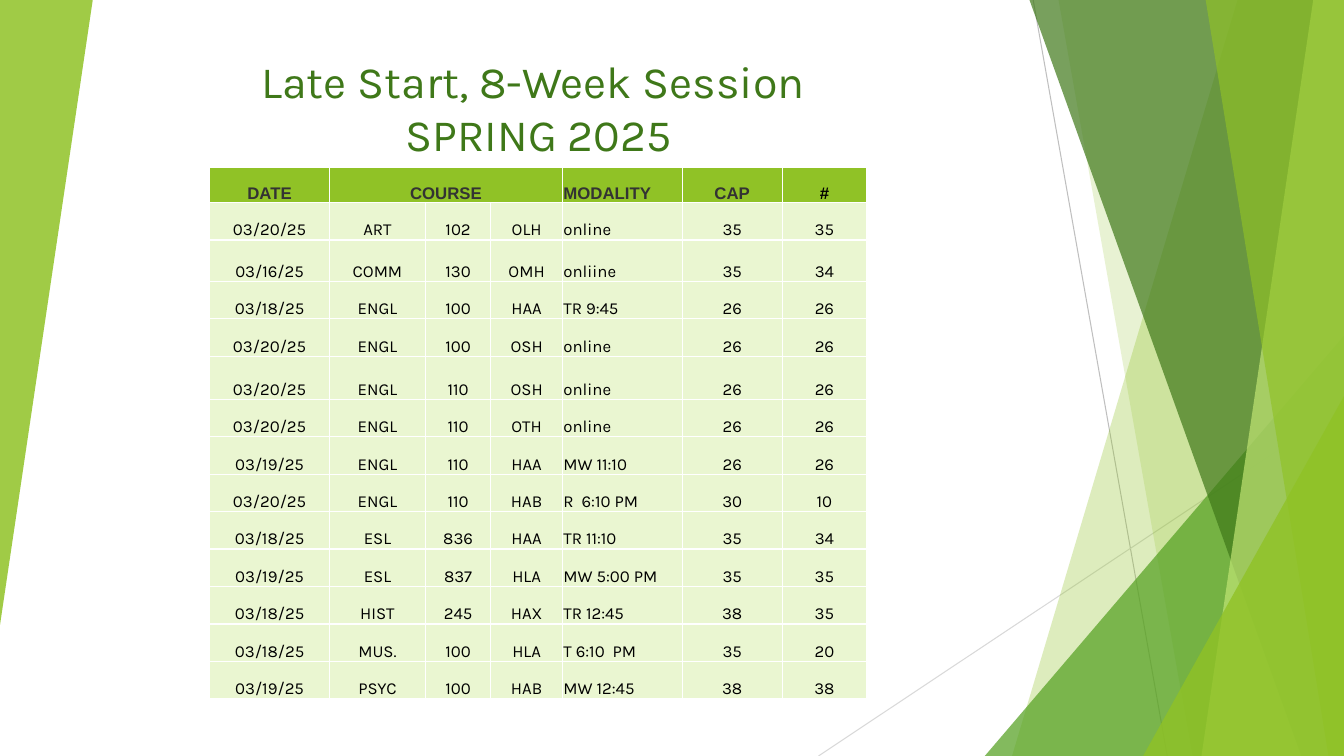
import lxml.etree
import pptx
import pptx.dml.color
import pptx.enum.shapes
import pptx.enum.text
import pptx.oxml.ns
import pptx.util
from dataclasses import dataclass

Pt = pptx.util.Pt

# Content
TITLE_LINES = ("Late Start, 8-Week Session ", "SPRING 2025")
HEADER = ("DATE", "COURSE", "", "", "MODALITY", "CAP", "#")
COURSES = [
    ("03/20/25", "ART", "102", "OLH", "online", "35", "35"),
    ("03/16/25", "COMM", "130", "OMH", "onliine", "35", "34"),
    ("03/18/25", "ENGL", "100", "HAA", "TR 9:45", "26", "26"),
    ("03/20/25", "ENGL", "100", "OSH", "online", "26", "26"),
    ("03/20/25", "ENGL", "110", "OSH", "online", "26", "26"),
    ("03/20/25", "ENGL", "110", "OTH", "online", "26", "26"),
    ("03/19/25", "ENGL", "110", "HAA", "MW 11:10", "26", "26"),
    ("03/20/25", "ENGL", "110", "HAB", "R  6:10 PM", "30", "10"),
    ("03/18/25", "ESL", "836", "HAA", "TR 11:10", "35", "34"),
    ("03/19/25", "ESL", "837", "HLA", "MW 5:00 PM", "35", "35"),
    ("03/18/25", "HIST", "245", "HAX", "TR 12:45", "38", "35"),
    ("03/18/25", "MUS.", "100", "HLA", "T 6:10  PM", "35", "20"),
    ("03/19/25", "PSYC", "100", "HAB", "MW 12:45", "38", "38"),
]
MODALITY_COLUMN, COUNT_COLUMN = 4, 6


@dataclass(frozen=True)
class Theme:
    lime: str = "90C226"
    green: str = "54A021"
    forest: str = "3F7819"
    pale_lime: str = "C0E474"
    row_fill: str = "EAF6D1"
    header_text: str = "333333"
    body_text: str = "000000"
    border: str = "FFFFFF"
    dark_line: str = "BFBFBF"
    light_line: str = "D9D9D9"
    title_font: str = "Karla"
    body_font: str = "Karla"
    header_font: str = "Arial"
    title_size: int = 32
    table_size: int = 12


THEME = Theme()

# Geometry in points
WIDTH, HEIGHT = 960, 540
WEDGE_TOP = -0.72
TITLE_BOX = (60.48, 34.56, 648.72, 84.96)
TABLE_LEFT, TABLE_TOP = 149.76, 119.52
COLUMN_WIDTHS = (85.68, 68.4, 46.8, 51.12, 85.68, 71.28, 60.48)
HEADER_HEIGHT, ROW_HEIGHT = 25.2, 26.75
TALL_ROWS = {2: 29.6, 5: 30.8}
CELL_MARGIN = 0.72

# Backdrop, back to front: wedges run from a slanted left edge to the slide's right edge
LINES = [
    ((738, 0), (833.76, HEIGHT), THEME.dark_line),
    ((WIDTH, 290.16), (584.64, HEIGHT), THEME.light_line),
]
BACKDROP = [  # wedge: top x, bottom x; triangle: left, top, width, height, rotation
    ("wedge", (884.16, 722.88), THEME.lime, 30),
    ("wedge", (756, 851.76), THEME.lime, 20),
    ("triangle", (703.44, 239.76, 256.56, 300.24, 0), THEME.green, 72),
    ("wedge", (735.12, 929.52), THEME.forest, 70),
    ("wedge", (938.16, 858.24), THEME.pale_lime, 70),
    ("wedge", (861.12, 948.96), THEME.lime, 65),
    ("triangle", (816.48, 282.96, 143.52, 257.04, 0), THEME.lime, 80),
    ("triangle", (0, 0, 66.24, 446.4, 180), THEME.lime, 85),
]


def rgb(color):
    return pptx.dml.color.RGBColor.from_string(color)


def add_child(parent, tag, **attributes):
    return lxml.etree.SubElement(parent, pptx.oxml.ns.qn(tag), attributes)


def style_paragraph(paragraph, font_name, size, color, bold, alignment):
    paragraph.alignment = alignment
    for run in paragraph.runs:
        run.font.name = font_name
        run.font.size = Pt(size)
        run.font.color.rgb = rgb(color)
        run.font.bold = bold


def add_line(shapes, start, end, color):
    line = shapes.add_connector(pptx.enum.shapes.MSO_CONNECTOR.STRAIGHT,
                                *(Pt(value) for value in start + end))
    line.line.color.rgb = rgb(color)
    line.line.width = Pt(0.75)
    add_child(line._element.spPr, "a:effectLst")


def add_wedge(shapes, top_x, bottom_x):
    builder = shapes.build_freeform(Pt(top_x), Pt(WEDGE_TOP))
    corners = [(WIDTH, WEDGE_TOP), (WIDTH, HEIGHT), (bottom_x, HEIGHT)]
    builder.add_line_segments([(Pt(x), Pt(y)) for x, y in corners], close=True)
    return builder.convert_to_shape()


def add_triangle(shapes, left, top, width, height, rotation):
    shape = shapes.add_shape(pptx.enum.shapes.MSO_SHAPE.ISOSCELES_TRIANGLE,
                             Pt(left), Pt(top), Pt(width), Pt(height))
    shape.adjustments[0] = 1
    shape.rotation = rotation
    return shape


def paint(shape, color, opacity):
    shape.shadow.inherit = False
    shape.line.fill.background()
    shape.fill.solid()
    shape.fill.fore_color.rgb = rgb(color)
    color_element = shape._element.spPr.find(".//" + pptx.oxml.ns.qn("a:srgbClr"))
    add_child(color_element, "a:alpha", val=str(opacity * 1000))


def add_borders(cell):
    properties = cell._tc.get_or_add_tcPr()
    for index, side in enumerate(("a:lnL", "a:lnR", "a:lnT", "a:lnB")):
        border = add_child(properties, side, w=str(Pt(1)))
        add_child(add_child(border, "a:solidFill"), "a:srgbClr", val=THEME.border)
        properties.insert(index, border)


def fill_cell(cell, text, row, column):
    header = row == 0
    cell.text_frame.text = text
    cell.vertical_anchor = pptx.enum.text.MSO_ANCHOR.BOTTOM
    cell.margin_left = cell.margin_right = cell.margin_top = Pt(CELL_MARGIN)
    cell.margin_bottom = 0
    cell.fill.solid()
    cell.fill.fore_color.rgb = rgb(THEME.lime if header else THEME.row_fill)
    add_borders(cell)
    dark_grey = header and column != COUNT_COLUMN
    align = pptx.enum.text.PP_ALIGN
    style_paragraph(cell.text_frame.paragraphs[0],
                    THEME.header_font if header else THEME.body_font,
                    THEME.table_size,
                    THEME.header_text if dark_grey else THEME.body_text,
                    header,
                    align.LEFT if column == MODALITY_COLUMN else align.CENTER)


def add_course_table(shapes):
    rows = [HEADER] + COURSES
    heights = [HEADER_HEIGHT] + [TALL_ROWS.get(index, ROW_HEIGHT)
                                 for index in range(1, len(rows))]
    table = shapes.add_table(len(rows), len(HEADER), Pt(TABLE_LEFT), Pt(TABLE_TOP),
                             Pt(sum(COLUMN_WIDTHS)), Pt(sum(heights))).table
    for column, width in zip(table.columns, COLUMN_WIDTHS):
        column.width = Pt(width)
    for table_row, height in zip(table.rows, heights):
        table_row.height = Pt(height)
    table.cell(0, 1).merge(table.cell(0, 3))
    for row, texts in enumerate(rows):
        for column, text in enumerate(texts):
            fill_cell(table.cell(row, column), text, row, column)


def set_title(title):
    title.left, title.top, title.width, title.height = (Pt(value) for value in TITLE_BOX)
    frame = title.text_frame
    frame.text = "\n".join(TITLE_LINES)
    frame.word_wrap = True
    frame.auto_size = pptx.enum.text.MSO_AUTO_SIZE.NONE
    frame.vertical_anchor = pptx.enum.text.MSO_ANCHOR.TOP
    for paragraph in frame.paragraphs:
        style_paragraph(paragraph, THEME.title_font, THEME.title_size, THEME.forest,
                        False, pptx.enum.text.PP_ALIGN.CENTER)


def main():
    presentation = pptx.Presentation()
    presentation.slide_width, presentation.slide_height = Pt(WIDTH), Pt(HEIGHT)
    slide = presentation.slides.add_slide(presentation.slide_layouts[5])

    # Backdrop
    for start, end, color in LINES:
        add_line(slide.shapes, start, end, color)
    builders = {"wedge": add_wedge, "triangle": add_triangle}
    for kind, geometry, color, opacity in BACKDROP:
        paint(builders[kind](slide.shapes, *geometry), color, opacity)

    # Title and course table
    set_title(slide.shapes.title)
    add_course_table(slide.shapes)
    presentation.save("out.pptx")


if __name__ == "__main__":
    main()
